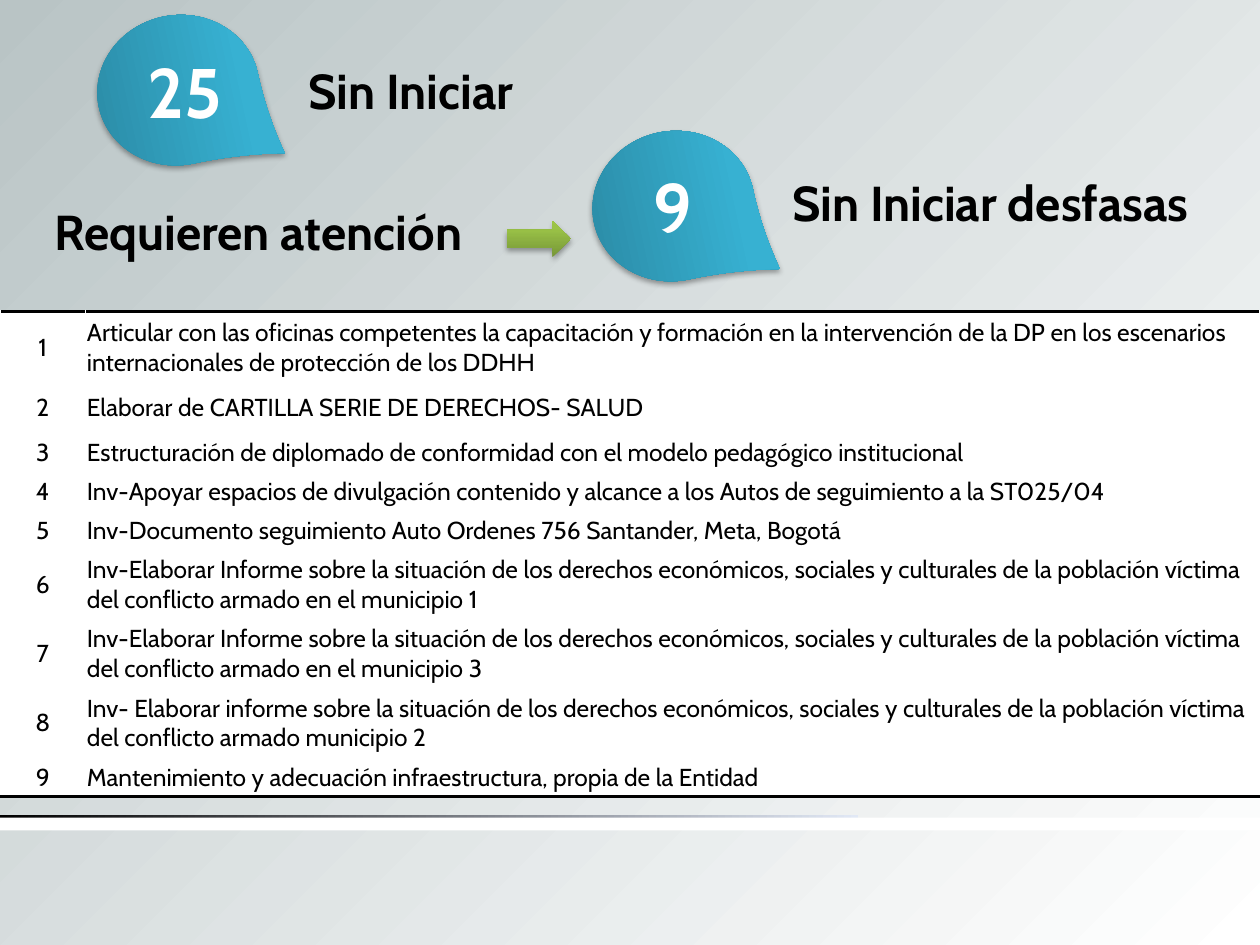
import pptx
import pptx.util
import pptx.dml.color
import pptx.enum.shapes
import pptx.enum.text
import pptx.oxml
import pptx.oxml.ns

Inches = pptx.util.Inches
Pt = pptx.util.Pt
SHAPES = pptx.enum.shapes.MSO_SHAPE
MIDDLE = pptx.enum.text.MSO_ANCHOR.MIDDLE
CENTER = pptx.enum.text.PP_ALIGN.CENTER
LEFT = pptx.enum.text.PP_ALIGN.LEFT
NAMESPACE = pptx.oxml.ns.nsdecls("a")


def color(value):
    return pptx.dml.color.RGBColor.from_string(value)


def set_gradient(owner, stops, direction):
    """Replace the gradient found inside owner; direction is a:lin or a:path XML."""
    old = next(owner.iter(pptx.oxml.ns.qn("a:gradFill")))
    stop_xml = "".join(
        f'<a:gs pos="{position * 1000}"><a:srgbClr val="{value}"/></a:gs>'
        for position, value in stops
    )
    new = pptx.oxml.parse_xml(
        f'<a:gradFill {NAMESPACE} rotWithShape="1">'
        f"<a:gsLst>{stop_xml}</a:gsLst>{direction}</a:gradFill>"
    )
    old.getparent().replace(old, new)


deck = pptx.Presentation()
deck.slide_width = Inches(10)
deck.slide_height = Inches(7.5)
page = deck.slides.add_slide(deck.slide_layouts[6])

page.background.fill.gradient()
set_gradient(
    page.background._cSld,
    [(0, "FFFFFF"), (100, "B9C4C5")],
    '<a:path path="circle"><a:fillToRect l="100000" t="100000"/></a:path>',
)

# Footer rule: a fading line partly covered by a white band
rule = page.shapes.add_shape(SHAPES.RECTANGLE, 0, Inches(6.47), Inches(6.81), Inches(0.05))
rule.fill.gradient()
set_gradient(rule._element, [(0, "000000"), (100, "E1E8F5")], '<a:lin ang="0" scaled="0"/>')
band = page.shapes.add_shape(SHAPES.RECTANGLE, 0, Inches(6.49), Inches(10), Inches(0.1))
band.fill.solid()
band.fill.fore_color.rgb = color("FFFFFF")
for shape in (rule, band):
    shape.line.fill.background()
    shape.shadow.inherit = False

# Teardrops and arrow share a vertical gradient and a soft shadow
BLUE = [(0, "2A88A2"), (80, "37B1D2"), (100, "34B4D6")]
GREEN = [(0, "779737"), (80, "9BC348"), (100, "9DC746")]
markers = [
    (SHAPES.TEAR, 0.82, 0.07, 1.19, 1.29, 77.9, BLUE),
    (SHAPES.TEAR, 4.75, 0.99, 1.19, 1.29, 77.9, BLUE),
    (SHAPES.RIGHT_ARROW, 4.02, 1.75, 0.51, 0.29, 0, GREEN),
]
for kind, left, top, width, height, rotation, stops in markers:
    marker = page.shapes.add_shape(kind, Inches(left), Inches(top), Inches(width), Inches(height))
    marker.rotation = rotation
    if kind == SHAPES.TEAR:
        marker.adjustments[0] = 1.118
    marker.line.fill.background()
    marker.fill.gradient()
    set_gradient(marker._element, stops, '<a:lin ang="16200000" scaled="0"/>')
    marker.shadow.inherit = False
    effects = marker._element.spPr.find(pptx.oxml.ns.qn("a:effectLst"))
    effects.append(pptx.oxml.parse_xml(
        f'<a:outerShdw {NAMESPACE} blurRad="{Pt(3.1)}" dist="{Pt(1.8)}" dir="5400000" '
        'rotWithShape="0"><a:srgbClr val="000000"><a:alpha val="35000"/></a:srgbClr>'
        "</a:outerShdw>"
    ))

labels = [
    ("Sin Iniciar", 2.15, 0.43, 2.22, 0.57, 28, "000000"),
    ("25", 0.92, 0.33, 1.09, 0.77, 40, "FFFFFF"),
    ("Sin Iniciar desfasas", 5.83, 1.32, 4.06, 0.57, 28, "000000"),
    ("9", 4.85, 1.25, 0.98, 0.77, 40, "FFFFFF"),
    ("Requieren atención", 0.02, 1.55, 4.06, 0.57, 28, "000000"),
]
for text, left, top, width, height, size, ink in labels:
    box = page.shapes.add_textbox(Inches(left), Inches(top), Inches(width), Inches(height))
    frame = box.text_frame
    frame.word_wrap = True
    frame.auto_size = pptx.enum.text.MSO_AUTO_SIZE.SHAPE_TO_FIT_TEXT
    frame.vertical_anchor = MIDDLE
    para = frame.paragraphs[0]
    para.alignment = CENTER
    span = para.add_run()
    span.text = text
    span.font.name = "Cabin"
    span.font.size = Pt(size)
    span.font.bold = True
    span.font.color.rgb = color(ink)

# Numbered list of pending activities: row height and text
activities = [
    (0.57, "Articular con las oficinas competentes la capacitación y formación en la intervención de la DP en los escenarios internacionales de protección de los DDHH"),
    (0.39, "Elaborar de CARTILLA SERIE DE DERECHOS- SALUD"),
    (0.31, "Estructuración de diplomado de conformidad con el modelo pedagógico institucional"),
    (0.31, "Inv-Apoyar espacios de divulgación contenido y alcance a los Autos de seguimiento a la ST025/04"),
    (0.31, "Inv-Documento seguimiento Auto Ordenes 756 Santander, Meta, Bogotá"),
    (0.55, "Inv-Elaborar Informe sobre la situación de los derechos económicos, sociales y culturales de la población víctima del conflicto armado en el municipio 1"),
    (0.55, "Inv-Elaborar Informe sobre la situación de los derechos económicos, sociales y culturales de la población víctima del conflicto armado en el municipio 3"),
    (0.55, "Inv- Elaborar informe sobre la situación de los derechos económicos, sociales y culturales de la población víctima del conflicto armado municipio 2"),
    (0.31, "Mantenimiento y adecuación infraestructura, propia de la Entidad"),
]
table = page.shapes.add_table(
    len(activities), 2, 0, Inches(2.47), Inches(10), Inches(3.87)
).table
table.first_row = False
table.horz_banding = False
table.columns[0].width = Inches(0.68)
table.columns[1].width = Inches(9.32)
borders = {0: "lnT", len(activities) - 1: "lnB"}

for row, (height, activity) in enumerate(activities):
    table.rows[row].height = Inches(height)
    for column, (text, alignment) in enumerate([(str(row + 1), CENTER), (activity, LEFT)]):
        cell = table.cell(row, column)
        cell.fill.solid()
        cell.fill.fore_color.rgb = color("FFFFFF")
        cell.vertical_anchor = MIDDLE
        cell.margin_left = cell.margin_top = cell.margin_right = Inches(0.01)
        cell.margin_bottom = 0
        para = cell.text_frame.paragraphs[0]
        para.alignment = alignment
        span = para.add_run()
        span.text = text
        span.font.name = "Cabin"
        span.font.size = Pt(14)
        span.font.bold = False
        span.font.color.rgb = color("000000")
        if row in borders:
            side = borders[row]
            cell._tc.get_or_add_tcPr().insert(0, pptx.oxml.parse_xml(
                f'<a:{side} {NAMESPACE} w="{Pt(2)}"><a:solidFill>'
                f'<a:srgbClr val="000000"/></a:solidFill></a:{side}>'
            ))

deck.save("out.pptx")
